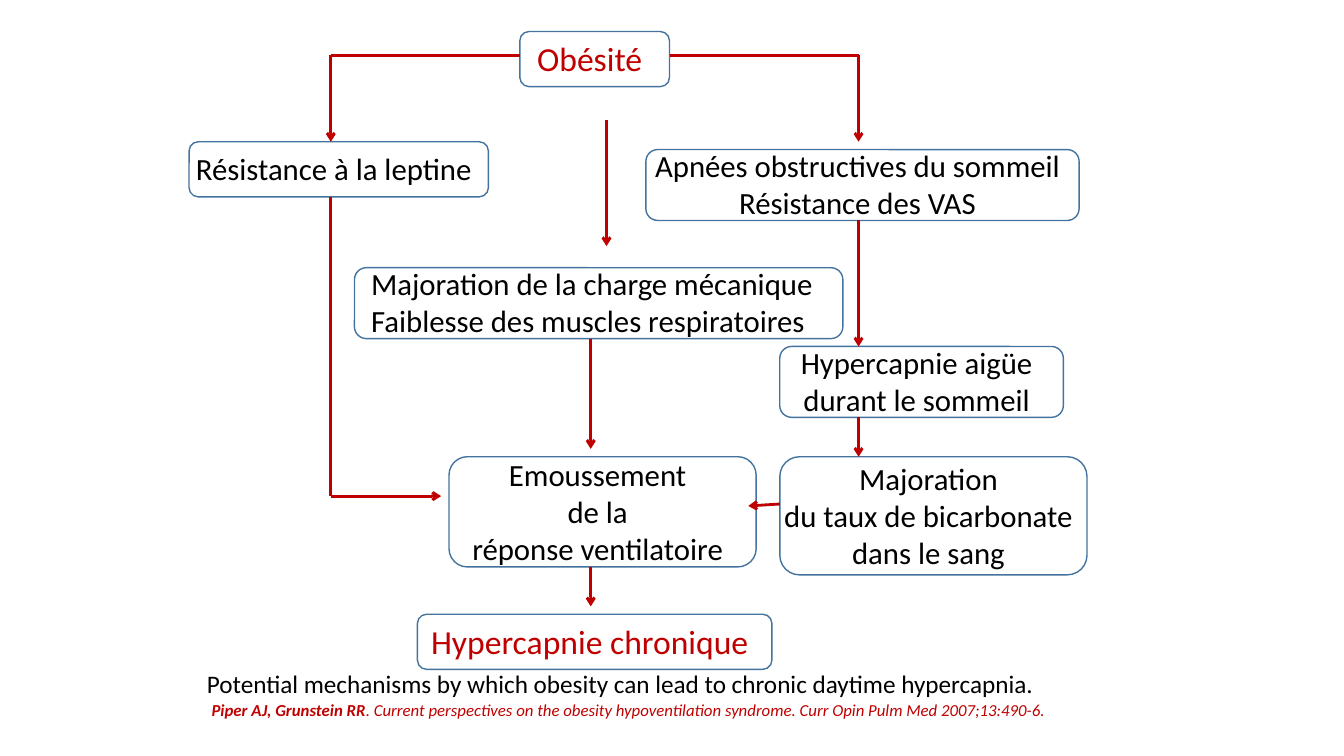
from lxml import etree
from pptx import Presentation, util as u
from pptx.dml.color import RGBColor
from pptx.enum import shapes, text
from pptx.oxml import ns

COLORS = {"accent": "C00000", "outline": "43739E", "ink": "000000"}
FONT = "Calibri"
SLIDE_WIDTH, SLIDE_HEIGHT = u.Inches(13.33), u.Inches(7.5)
ROWS = 96
CELL = SLIDE_HEIGHT / ROWS

NODES = [
    (66, 4, 19, 7, ["Obésité"]),
    (24, 18, 38, 7, ["Résistance à la leptine"]),
    (82, 19, 55, 9, ["Apnées obstructives du sommeil", "Résistance des VAS"]),
    (45, 34, 62, 9, ["Majoration de la charge mécanique",
                     "Faiblesse des muscles respiratoires"]),
    (99, 44, 36, 9, ["Hypercapnie aigüe", "durant le sommeil"]),
    (57, 58, 39, 14, ["Emoussement", "de la", "réponse ventilatoire"]),
    (99, 58, 39, 15, ["Majoration", "du taux de bicarbonate", "dans le sang"]),
    (53, 78, 45, 7, ["Hypercapnie chronique"]),
]
KEY_NODES = {"Obésité", "Hypercapnie chronique"}
LEFT_ALIGNED = {"Majoration de la charge mécanique"}

ROUTES = [
    [(66, 7), (42, 7), (42, 18)],
    [(85, 7), (109, 7), (109, 18)],
    [(77, 15.25), (77, 31.25)],
    [(42, 25), (42, 63), (56, 63)],
    [(109, 28), (109, 44)],
    [(109, 53), (109, 58)],
    [(75, 43), (75, 57)],
    [(99, 64), (95, 64.25)],
    [(75, 72), (75, 77)],
]


def grid(*cells):
    return [u.Emu(round(cell * CELL)) for cell in cells]


def color(name):
    return RGBColor.from_string(COLORS[name])


def set_font(font, size, name):
    font.name = FONT
    font.size = u.Pt(size)
    font.color.rgb = color(name)


def add_node(slide, left, top, width, height, lines):
    shape = slide.shapes.add_shape(
        shapes.MSO_SHAPE.ROUNDED_RECTANGLE, *grid(left, top, width, height))
    shape.shadow.inherit = False
    shape.fill.background()
    shape.line.color.rgb = color("outline")
    shape.line.width = u.Pt(1)
    title = lines[0]
    is_left = title in LEFT_ALIGNED
    frame = shape.text_frame
    frame.word_wrap = not is_left and len(lines) < 3
    frame.vertical_anchor = text.MSO_ANCHOR.MIDDLE
    frame.margin_left = u.Inches(0.13 if is_left else 0)
    frame.margin_right = u.Inches(0.1)
    frame.margin_top = 0
    frame.margin_bottom = u.Inches(0.02)
    frame.text = "\n".join(lines)
    for paragraph in frame.paragraphs:
        paragraph.alignment = text.PP_ALIGN.LEFT if is_left else text.PP_ALIGN.CENTER
        if title in KEY_NODES:
            set_font(paragraph.font, 24, "accent")
        else:
            set_font(paragraph.font, 22, "ink")
    if is_left:
        frame.word_wrap = True


def add_line(slide, start, end, has_arrow):
    connector = slide.shapes.add_connector(
        shapes.MSO_CONNECTOR.STRAIGHT, *grid(*start, *end))
    connector.line.color.rgb = color("accent")
    connector.line.width = u.Pt(2)
    if has_arrow:
        etree.SubElement(connector.line._get_or_add_ln(), ns.qn("a:tailEnd"), type="arrow")
    etree.SubElement(connector._element.spPr, ns.qn("a:effectLst"))


def add_route(slide, points):
    for start, end in zip(points, points[1:]):
        add_line(slide, start, end, end == points[-1])


def add_caption(slide, left, top, width, height, size, name, runs):
    box = slide.shapes.add_textbox(*grid(left, top, width, height))
    box.text_frame.word_wrap = True
    paragraph = box.text_frame.paragraphs[0]
    set_font(paragraph.font, size, name)
    for words, bold, italic in runs:
        run = paragraph.add_run()
        run.text = words
        run.font.bold = bold
        run.font.italic = italic


def main():
    presentation = Presentation()
    presentation.slide_width, presentation.slide_height = SLIDE_WIDTH, SLIDE_HEIGHT
    slide = presentation.slides.add_slide(presentation.slide_layouts[6])
    for node in NODES:
        add_node(slide, *node)
    for route in ROUTES:
        add_route(slide, route)
    add_caption(slide, 25, 84.25, 118, 5, 18, "ink", [
        ("Potential mechanisms by which obesity can lead to chronic daytime hypercapnia.",
         False, False)])
    add_caption(slide, 25.6, 88.25, 121, 4, 12, "accent", [
        ("Piper AJ, Grunstein RR", True, True),
        (". Current perspectives on the obesity hypoventilation syndrome. "
         "Curr Opin Pulm Med 2007;13:490-6.", False, True)])
    presentation.save("out.pptx")


if __name__ == "__main__":
    main()
